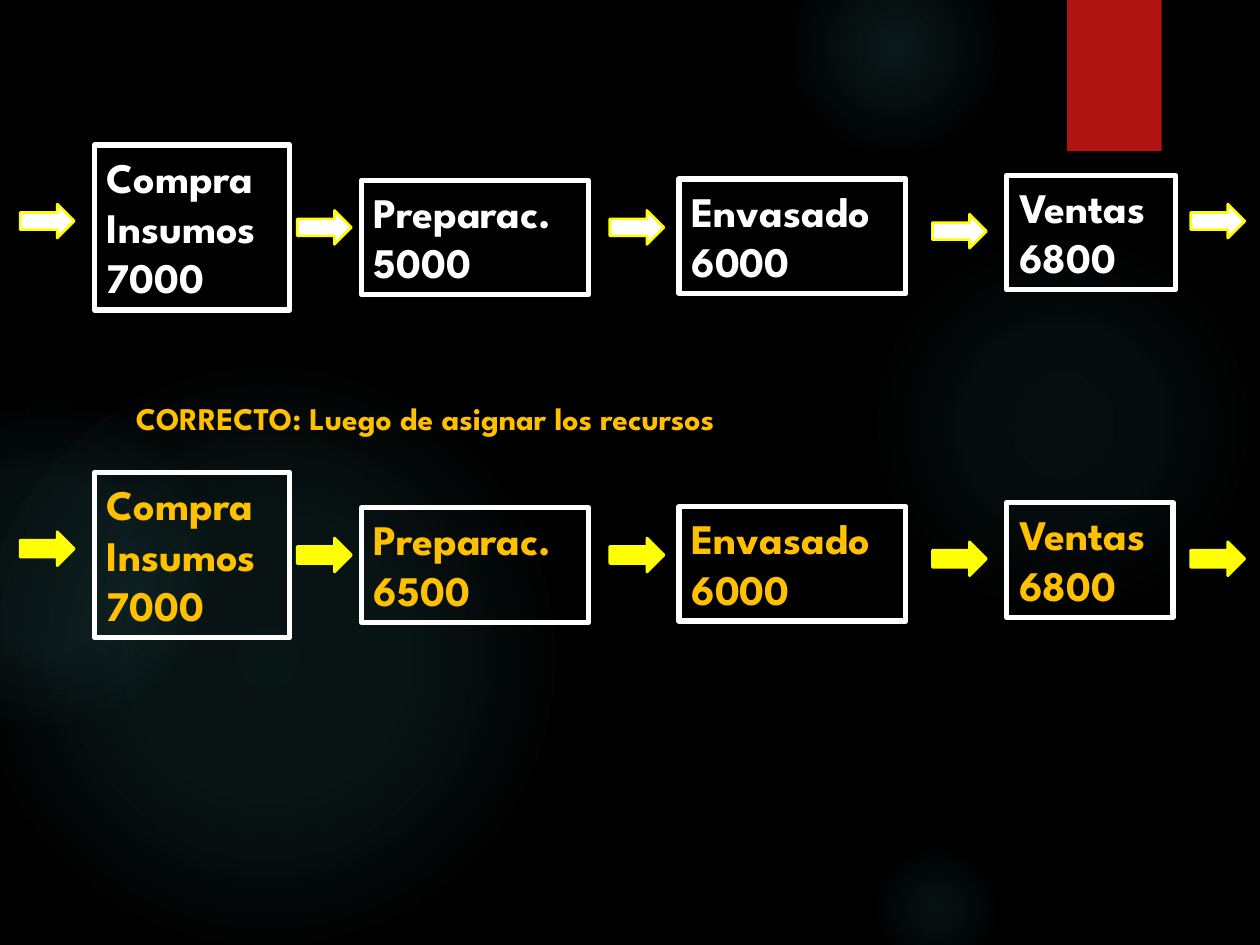
"""Build a slide comparing two process chains before and after assigning resources."""
from dataclasses import dataclass

from pptx import Presentation
from pptx.dml.color import RGBColor
from pptx.enum.shapes import MSO_SHAPE
from pptx.enum.text import MSO_ANCHOR, MSO_AUTO_SIZE, PP_ALIGN
from pptx.oxml import parse_xml
from pptx.oxml.ns import nsdecls, qn
from pptx.util import Inches, Pt

FONT = "League Spartan"
COLORS = {"black": "000000", "white": "FFFFFF", "gold": "FFC000",
          "yellow": "FFFF00", "red": "B01513", "teal": "50B9C1"}


@dataclass(frozen=True)
class Glow:
    left: float
    top: float
    size: float
    core: int
    mid: int
    edge: int


@dataclass(frozen=True)
class Step:
    left: float
    top: float
    width: float
    height: float
    lines: tuple[str, ...]
    solid: bool = False


@dataclass(frozen=True)
class Chain:
    shift: float
    ink: str
    arrow: str
    steps: tuple[Step, ...]
    exit: float


def make_steps(prep: str, filled: int, last: float) -> tuple[Step, ...]:
    return (
        Step(0.75, 1.15, 1.55, 1.31, ("Compra", "Insumos", "7000")),
        Step(2.87, 1.43, 1.8, 0.91, ("Preparac.", prep), filled == 1),
        Step(5.39, 1.42, 1.8, 0.91, ("Envasado", "6000"), filled == 2),
        Step(7.99, 1.39, last, 0.91, ("Ventas", "6800")),
    )


GLOWS = (
    Glow(6.89, 1.83, 3.08, 7, 6, 69),
    Glow(6.22, -0.5, 1.75, 14, 7, 73),
    Glow(6.89, 6.67, 1.08, 9, 5, 66),
    Glow(-0.17, 2.92, 4.58, 11, 10, 75),
    Glow(-0.92, 3.17, 2.58, 8, 8, 72),
)
CHAINS = (
    Chain(0, "white", "white", make_steps("5000", 1, 1.34), 1.62),
    Chain(2.6, "gold", "yellow", make_steps("6500", 2, 1.32), 1.7),
)
ARROWS = ((0.16, 1.62), (2.36, 1.67), (4.84, 1.67), (7.4, 1.7))


def color(name: str) -> RGBColor:
    return RGBColor.from_string(COLORS[name])


def add_shape(slide, kind, left: float, top: float, width: float, height: float,
              fill: str = "", line: str = "", weight: float = 0):
    shape = slide.shapes.add_shape(
        kind, Inches(left), Inches(top), Inches(width), Inches(height))
    shape.shadow.inherit = False
    if fill:
        shape.fill.solid()
        shape.fill.fore_color.rgb = color(fill)
    else:
        shape.fill.background()
    if line:
        shape.line.color.rgb = color(line)
        shape.line.width = Pt(weight)
    else:
        shape.line.fill.background()
    return shape


def add_glow(slide, glow: Glow) -> None:
    shape = add_shape(slide, MSO_SHAPE.OVAL, glow.left, glow.top, glow.size, glow.size)
    stops = "".join(
        f'<a:gs pos="{pos * 1000}"><a:srgbClr val="{COLORS["teal"]}">'
        f'<a:alpha val="{alpha * 1000}"/></a:srgbClr></a:gs>'
        for pos, alpha in ((0, glow.core), (36, glow.mid), (glow.edge, 0)))
    grad = parse_xml(
        f'<a:gradFill {nsdecls("a")} rotWithShape="1"><a:gsLst>{stops}</a:gsLst>'
        '<a:path path="circle"><a:fillToRect l="50000" t="50000" r="50000" b="50000"/>'
        '</a:path></a:gradFill>')
    props = shape._element.spPr
    props.replace(props.find(qn("a:noFill")), grad)


def set_text(shape, lines: tuple[str, ...], size: int, ink: str) -> None:
    frame = shape.text_frame
    frame.text = "\n".join(lines)
    frame.word_wrap = False
    frame.auto_size = MSO_AUTO_SIZE.SHAPE_TO_FIT_TEXT
    frame.vertical_anchor = MSO_ANCHOR.TOP
    for para in frame.paragraphs:
        para.alignment = PP_ALIGN.LEFT
        for run in para.runs:
            run.font.name = FONT
            run.font.size = Pt(size)
            run.font.bold = True
            run.font.color.rgb = color(ink)


def add_chain(slide, chain: Chain) -> None:
    for step in chain.steps:
        box = add_shape(slide, MSO_SHAPE.RECTANGLE, step.left, step.top + chain.shift,
                        step.width, step.height, "black" if step.solid else "", "white", 3)
        set_text(box, step.lines, 24, chain.ink)
    for left, top in (*ARROWS, (9.45, chain.exit)):
        add_shape(slide, MSO_SHAPE.RIGHT_ARROW, left, top + chain.shift, 0.43, 0.27,
                  chain.arrow, "yellow", 1.5)


def main() -> None:
    deck = Presentation()
    deck.slide_width, deck.slide_height = Inches(10), Inches(7.5)
    slide = deck.slides.add_slide(deck.slide_layouts[6])
    slide.background.fill.solid()
    slide.background.fill.fore_color.rgb = color("black")
    for glow in GLOWS:
        add_glow(slide, glow)
    add_shape(slide, MSO_SHAPE.RECTANGLE, 8.47, 0, 0.75, 1.2, "red")
    for chain in CHAINS:
        add_chain(slide, chain)
    label = slide.shapes.add_textbox(Inches(0.98), Inches(3.12), Inches(5.43), Inches(0.4))
    set_text(label, ("CORRECTO: Luego de asignar los recursos",), 18, "gold")
    deck.save("out.pptx")


if __name__ == "__main__":
    main()
